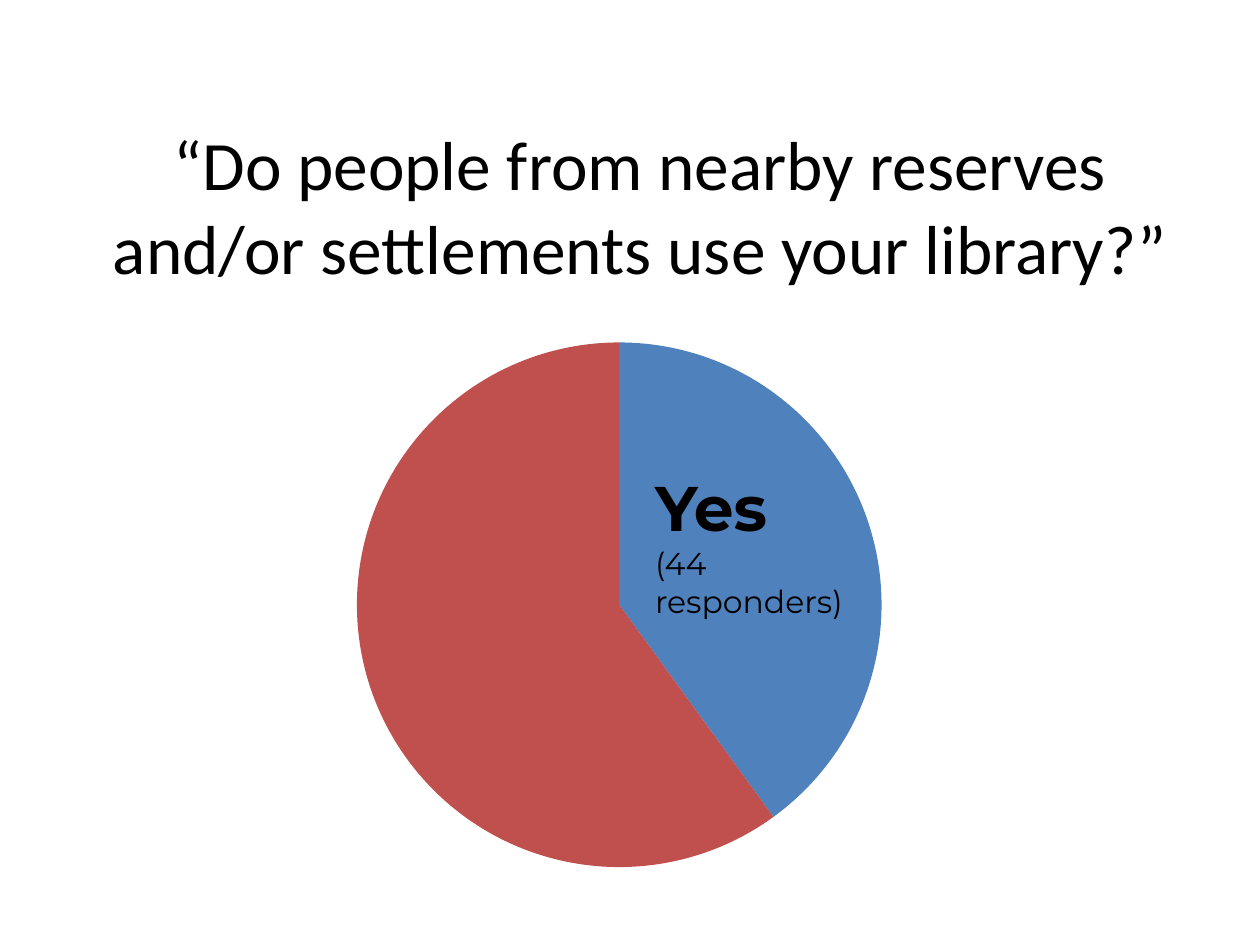
from dataclasses import dataclass

from pptx import Presentation
from pptx.chart.data import CategoryChartData
from pptx.dml.color import RGBColor
from pptx.enum import chart as charts, text
from pptx.util import Inches, Pt


@dataclass(frozen=True)
class Theme:
    ink: RGBColor = RGBColor(0, 0, 0)
    yes: RGBColor = RGBColor(0x4F, 0x81, 0xBD)
    no: RGBColor = RGBColor(0xC0, 0x50, 0x4D)
    heading_font: str = "Calibri"
    label_font: str = "Montserrat"
    question_size: float = 39.6
    answer_size: int = 36
    detail_size: int = 18


THEME = Theme()


def set_font(font, name, size, bold=False):
    font.color.rgb = THEME.ink
    for key, value in {"name": name, "size": Pt(size), "bold": bold}.items():
        setattr(font, key, value)


def place_question(slide, box, wording):
    question = slide.shapes.title
    for key, value in zip(("left", "top", "width", "height"), box):
        setattr(question, key, value)
    frame = question.text_frame
    frame.text = wording
    frame_format = {
        "word_wrap": True,
        "auto_size": text.MSO_AUTO_SIZE.NONE,
        "vertical_anchor": text.MSO_ANCHOR.MIDDLE,
    }
    for key, value in frame_format.items():
        setattr(frame, key, value)
    line = frame.paragraphs[0]
    line.alignment = text.PP_ALIGN.CENTER
    set_font(line.runs[0].font, THEME.heading_font, THEME.question_size)


def add_answer_pie(slide, box, shares):
    answers = CategoryChartData()
    answers.categories = ["1", "2"]
    answers.add_series("Series 1", shares)
    pie = slide.shapes.add_chart(charts.XL_CHART_TYPE.PIE, *box, answers).chart
    pie.has_legend = False
    pie.has_title = False
    set_font(pie.font, THEME.heading_font, THEME.detail_size)
    plot = pie.plots[0]
    plot.vary_by_categories = True
    for index, color in enumerate((THEME.yes, THEME.no)):
        fill = plot.series[0].points[index].format.fill
        fill.solid()
        fill.fore_color.rgb = color


def add_slice_label(slide, box, answer, detail):
    frame = slide.shapes.add_textbox(*box).text_frame
    frame.word_wrap = True
    frame.auto_size = text.MSO_AUTO_SIZE.SHAPE_TO_FIT_TEXT
    frame.text = f"{answer}\n{detail}"
    styles = ((THEME.answer_size, True), (THEME.detail_size, False))
    for line, (size, bold) in zip(frame.paragraphs, styles):
        set_font(line.runs[0].font, THEME.label_font, size, bold)


def main():
    deck = Presentation()
    deck.slide_width, deck.slide_height = Inches(10), Inches(7.5)
    slide = deck.slides.add_slide(deck.slide_layouts.get_by_name("Title Only"))
    place_question(
        slide,
        [Inches(n) for n in (0.58, 1, 9, 1.25)],
        "“Do people from nearby reserves and/or settlements use your library?”",
    )
    add_answer_pie(slide, [Inches(n) for n in (1.58, 2.58, 6.67, 4.44)], (40, 60))
    add_slice_label(
        slide,
        [Inches(n) for n in (5.1, 3.67, 1.99, 1.31)],
        "Yes",
        "(44 responders)",
    )
    deck.save("out.pptx")


if __name__ == "__main__":
    main()
